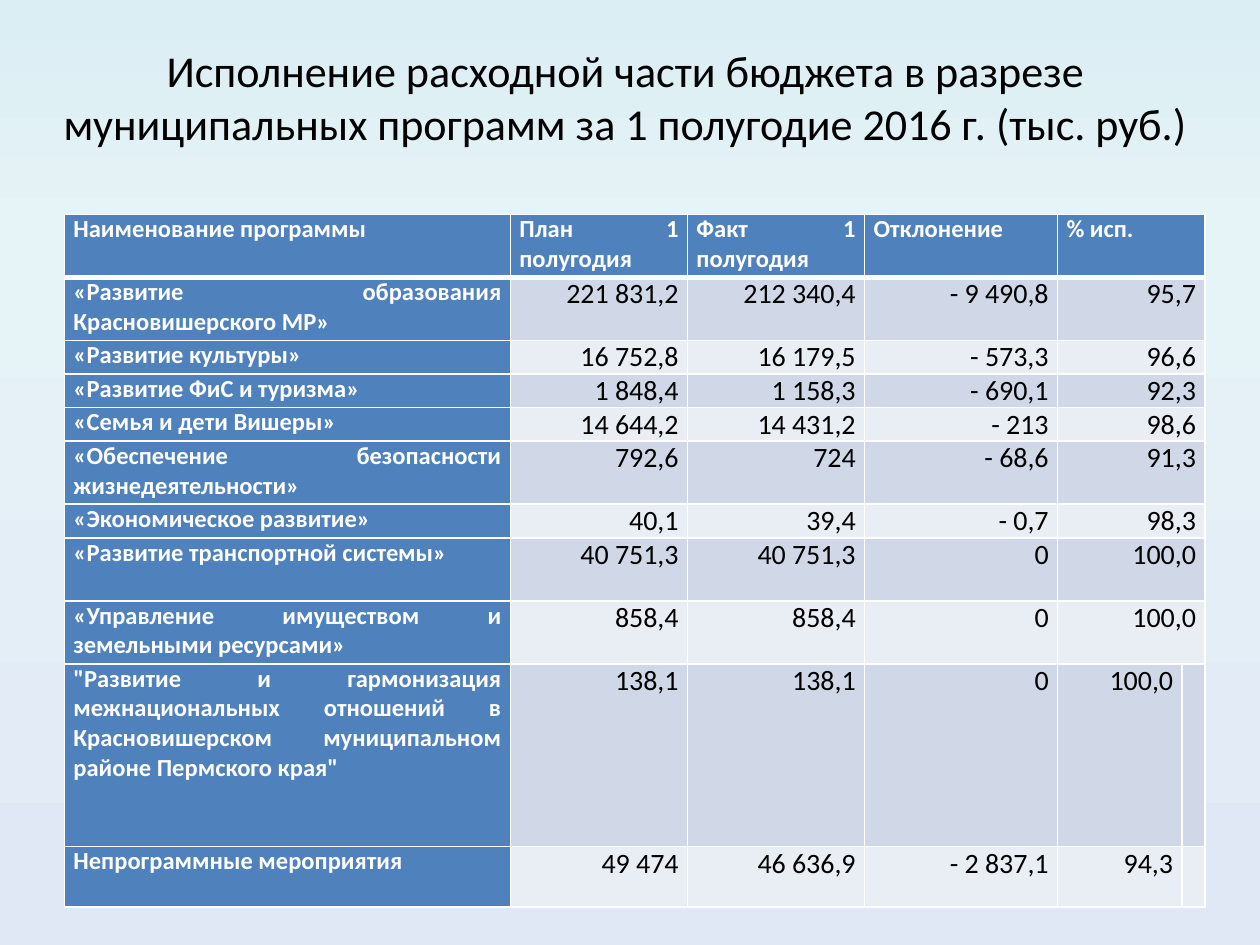
from copy import deepcopy

from lxml import etree
from pptx import Presentation
from pptx.dml.color import RGBColor
from pptx.enum.text import MSO_ANCHOR, PP_ALIGN
from pptx.oxml.ns import qn
from pptx.util import Cm, Pt

CENTER, RIGHT, JUSTIFY = PP_ALIGN.CENTER, PP_ALIGN.RIGHT, PP_ALIGN.JUSTIFY
MIDDLE = MSO_ANCHOR.MIDDLE

BLACK = RGBColor(0x00, 0x00, 0x00)
WHITE = RGBColor(0xFF, 0xFF, 0xFF)
BLUE = RGBColor(0x4F, 0x81, 0xBD)
BAND_DARK = RGBColor(0xD0, 0xD8, 0xE8)
BAND_LIGHT = RGBColor(0xE9, 0xED, 0xF4)
BACKGROUND = [
    (0, RGBColor(0xDB, 0xEE, 0xF4)),
    (0.25, RGBColor(0xE6, 0xF3, 0xF7)),
    (1, RGBColor(0xE1, 0xE8, 0xF5)),
]
FONT = "Calibri"

TITLE = ("Исполнение расходной части бюджета в разрезе "
         "муниципальных программ за 1 полугодие 2016 г. (тыс. руб.)")
HEADER = ("Наименование программы", "План 1 полугодия", "Факт 1 полугодия",
          "Отклонение", "% исп.")
PROGRAMS = [
    ("«Развитие образования Красновишерского МР»",
     "221 831,2", "212 340,4", "- 9 490,8", "95,7"),
    ("«Развитие культуры»", "16 752,8", "16 179,5", "- 573,3", "96,6"),
    ("«Развитие ФиС и туризма»", "1 848,4", "1 158,3", "- 690,1", "92,3"),
    ("«Семья и дети Вишеры»", "14 644,2", "14 431,2", "- 213", "98,6"),
    ("«Обеспечение безопасности жизнедеятельности»",
     "792,6", "724", "- 68,6", "91,3"),
    ("«Экономическое развитие»", "40,1", "39,4", "- 0,7", "98,3"),
    ("«Развитие транспортной системы»",
     "40 751,3", "40 751,3", "0", "100,0"),
    ("«Управление имуществом и земельными ресурсами»",
     "858,4", "858,4", "0", "100,0"),
    ("\"Развитие и гармонизация межнациональных отношений в "
     "Красновишерском муниципальном районе Пермского края\"",
     "138,1", "138,1", "0", "100,0"),
    ("Непрограммные мероприятия", "49 474", "46 636,9", "- 2 837,1", "94,3"),
]
ROWS = [HEADER] + PROGRAMS
SPLIT_ROWS = 2  # the last rows keep the narrow extra column separate
COLUMN_WIDTHS = [8.99, 3.57, 3.57, 3.89, 2.51, 0.26]
ROW_HEIGHTS = [1.27, 1.27, 0.64, 0.64, 0.64, 1.27, 0.64, 1.27, 1.27, 3.68, 1.22]


def paint_background(page):
    fill = page.background.fill
    fill.gradient()
    fill.gradient_angle = 270
    stop_list = page.element.find(".//" + qn("a:gsLst"))
    stop_list.append(deepcopy(stop_list[-1]))
    for stop, (position, color) in zip(fill.gradient_stops, BACKGROUND):
        stop.position = position
        stop.color.rgb = color


def write(frame, text, size, color, alignment, bold=False):
    paragraph = frame.paragraphs[0]
    paragraph.text = text
    paragraph.alignment = alignment
    font = paragraph.font
    font.name, font.size, font.bold = FONT, Pt(size), bold
    font.color.rgb = color


def add_title(page):
    box = page.shapes.add_textbox(Cm(0.71), Cm(0.76), Cm(23.8), Cm(2.36))
    box.text_frame.word_wrap = True
    box.text_frame.vertical_anchor = MIDDLE
    write(box.text_frame, TITLE, 25.2, BLACK, CENTER)


def set_borders(cell, top, bottom):
    """Draw white borders; top and bottom widths are in points."""
    properties = cell._tc.get_or_add_tcPr()
    sides = [("a:lnL", 1), ("a:lnR", 1), ("a:lnT", top), ("a:lnB", bottom)]
    for index, (side, width) in enumerate(sides):
        line = etree.Element(qn(side), w=str(Pt(width)))
        solid = etree.SubElement(line, qn("a:solidFill"))
        etree.SubElement(solid, qn("a:srgbClr"), val=str(WHITE))
        properties.insert(index, line)


def add_budget_table(page):
    table = page.shapes.add_table(
        len(ROWS), len(COLUMN_WIDTHS), Cm(1.3), Cm(4.32),
        Cm(sum(COLUMN_WIDTHS)), Cm(sum(ROW_HEIGHTS))).table
    for column, width in zip(table.columns, COLUMN_WIDTHS):
        column.width = Cm(width)
    for row, height in zip(table.rows, ROW_HEIGHTS):
        row.height = Cm(height)

    last = len(COLUMN_WIDTHS) - 1
    for r, texts in enumerate(ROWS):
        if r < len(ROWS) - SPLIT_ROWS:
            table.cell(r, last - 1).merge(table.cell(r, last))
        for c in range(len(COLUMN_WIDTHS)):
            cell = table.cell(r, c)
            heading = r == 0 or c == 0
            cell.margin_left = cell.margin_right = Cm(0.18)
            cell.margin_top = cell.margin_bottom = 0
            cell.fill.solid()
            band = BAND_DARK if r % 2 else BAND_LIGHT
            cell.fill.fore_color.rgb = BLUE if heading else band
            set_borders(cell, 3 if r == 1 else 1, 3 if r == 0 else 1)
            if c == last:
                continue
            if heading:
                write(cell.text_frame, texts[c], 14, WHITE, JUSTIFY, bold=True)
            else:
                write(cell.text_frame, texts[c], 16, BLACK, RIGHT)


def main():
    deck = Presentation()
    deck.slide_width, deck.slide_height = Cm(25.4), Cm(19.05)
    page = deck.slides.add_slide(deck.slide_layouts[6])
    paint_background(page)
    add_title(page)
    add_budget_table(page)
    deck.save("out.pptx")


if __name__ == "__main__":
    main()
